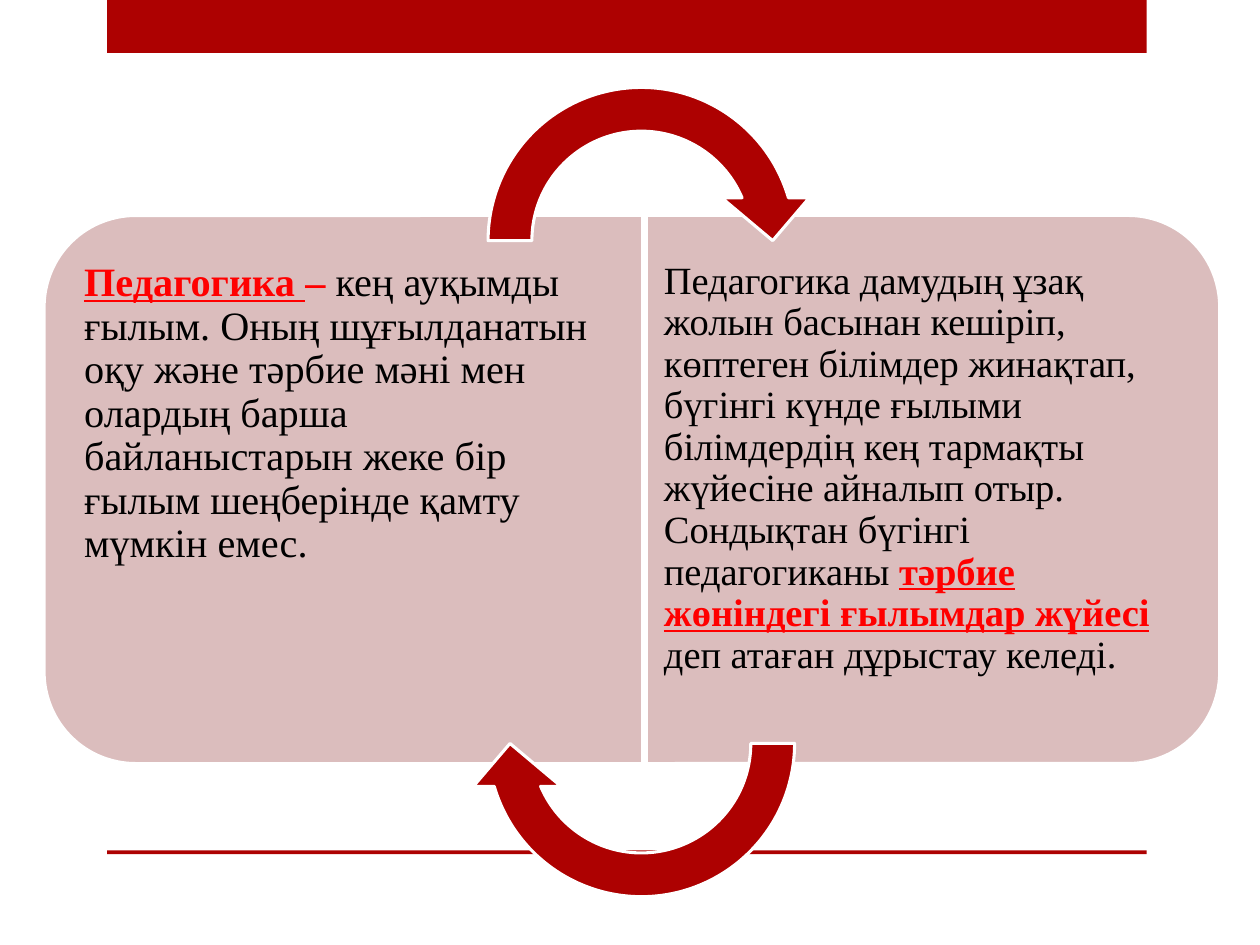
from pptx import Presentation
from pptx.dml.color import RGBColor
from pptx.enum.shapes import MSO_SHAPE
from pptx.enum.text import MSO_ANCHOR, PP_ALIGN
from pptx.util import Inches, Pt

WHITE = RGBColor(0xFF, 0xFF, 0xFF)
BLACK = RGBColor(0x00, 0x00, 0x00)
RED = RGBColor(0xFF, 0x00, 0x00)
DARK_RED = RGBColor(0xAD, 0x01, 0x01)
PINK = RGBColor(0xDB, 0xBD, 0xBD)
FONT = "Times New Roman"

PANEL_TOP = 1.71
PANEL_HEIGHT = 4.35
ROUNDED_SIDE_MARGIN = 0.22
ARROW_SIZE = 2.78

LEFT_TEXT = [
    ("Педагогика ", {"color": RED, "bold": True, "underline": True}),
    ("– ", {"color": RED, "bold": True}),
    ("кең ауқымды ғылым. Оның шұғылданатын оқу жəне тəрбие мəні мен "
     "олардың барша байланыстарын жеке бір ғылым шеңберінде қамту "
     "мүмкін емес.", {}),
]
RIGHT_TEXT = [
    ("Педагогика дамудың ұзақ жолын басынан кешіріп, көптеген білімдер "
     "жинақтап, бүгінгі күнде ғылыми білімдердің кең тармақты жүйесіне "
     "айналып отыр. Сондықтан бүгінгі педагогиканы ", {}),
    ("тəрбие жөніндегі ғылымдар жүйесі ",
     {"color": RED, "bold": True, "underline": True}),
    ("деп атаған дұрыстау келеді.", {}),
]


def add_run(paragraph, text, size, color=BLACK, bold=False, underline=False):
    run = paragraph.add_run()
    run.text = text
    run.font.name = FONT
    run.font.size = Pt(size)
    run.font.color.rgb = color
    run.font.bold = bold
    run.font.underline = underline


def add_filled_shape(slide, kind, box, fill, outlined=True, rotation=0, adjustments=()):
    shape = slide.shapes.add_shape(kind, *map(Inches, box))
    shape.shadow.inherit = False
    shape.fill.solid()
    shape.fill.fore_color.rgb = fill
    if outlined:
        shape.line.color.rgb = WHITE
        shape.line.width = Pt(1.75)
    else:
        shape.line.fill.background()
    shape.rotation = rotation
    for index, value in enumerate(adjustments):
        shape.adjustments[index] = value


def add_text(slide, box, runs, size, insets):
    frame = slide.shapes.add_textbox(*map(Inches, box)).text_frame
    frame.word_wrap = True
    frame.vertical_anchor = MSO_ANCHOR.TOP
    (frame.margin_left, frame.margin_top,
     frame.margin_right, frame.margin_bottom) = map(Inches, insets)
    paragraph = frame.paragraphs[0]
    paragraph.alignment = PP_ALIGN.LEFT
    paragraph.line_spacing = 0.9
    for text, style in runs:
        add_run(paragraph, text, size, **style)


def add_frame_bars(slide, left, width):
    for top, height in ((0, 0.42), (6.75, 0.03)):
        add_filled_shape(slide, MSO_SHAPE.RECTANGLE, (left, top, width, height),
                         DARK_RED, outlined=False)


def add_panel(slide, box, rotation, text_offset, runs, size, insets):
    left, top, width, height = box
    shift = (width - height) / 2
    add_filled_shape(slide, MSO_SHAPE.ROUND_2_SAME_RECTANGLE,
                     (left + shift, top - shift, height, width),
                     PINK, rotation=rotation, adjustments=(0.167, 0))
    text_box = (left + text_offset, top + 0.21,
                width - ROUNDED_SIDE_MARGIN, height - 0.42)
    add_text(slide, text_box, runs, size, insets)


def add_cycle_arrows(slide, left, tops):
    for top, rotation in zip(tops, (0, 180)):
        add_filled_shape(slide, MSO_SHAPE.CIRCULAR_ARROW,
                         (left, top, ARROW_SIZE, ARROW_SIZE), DARK_RED,
                         rotation=rotation,
                         adjustments=(0.125, 11.42, 204.58, 108, 0.125))


def main():
    presentation = Presentation()
    presentation.slide_width = Inches(10)
    presentation.slide_height = Inches(7.5)
    slide = presentation.slides.add_slide(presentation.slide_layouts[6])
    add_frame_bars(slide, 0.85, 8.25)
    add_panel(slide, (0.35, PANEL_TOP, 4.75, PANEL_HEIGHT), 270,
              ROUNDED_SIDE_MARGIN, LEFT_TEXT, 23, (0.1, 0.16, 0.14, 0.16))
    add_panel(slide, (5.13, PANEL_TOP, 4.55, PANEL_HEIGHT), 90,
              0, RIGHT_TEXT, 22, (0.14, 0.15, 0.09, 0.15))
    add_cycle_arrows(slide, 3.7, (0.52, 4.51))
    presentation.save("out.pptx")


if __name__ == "__main__":
    main()
